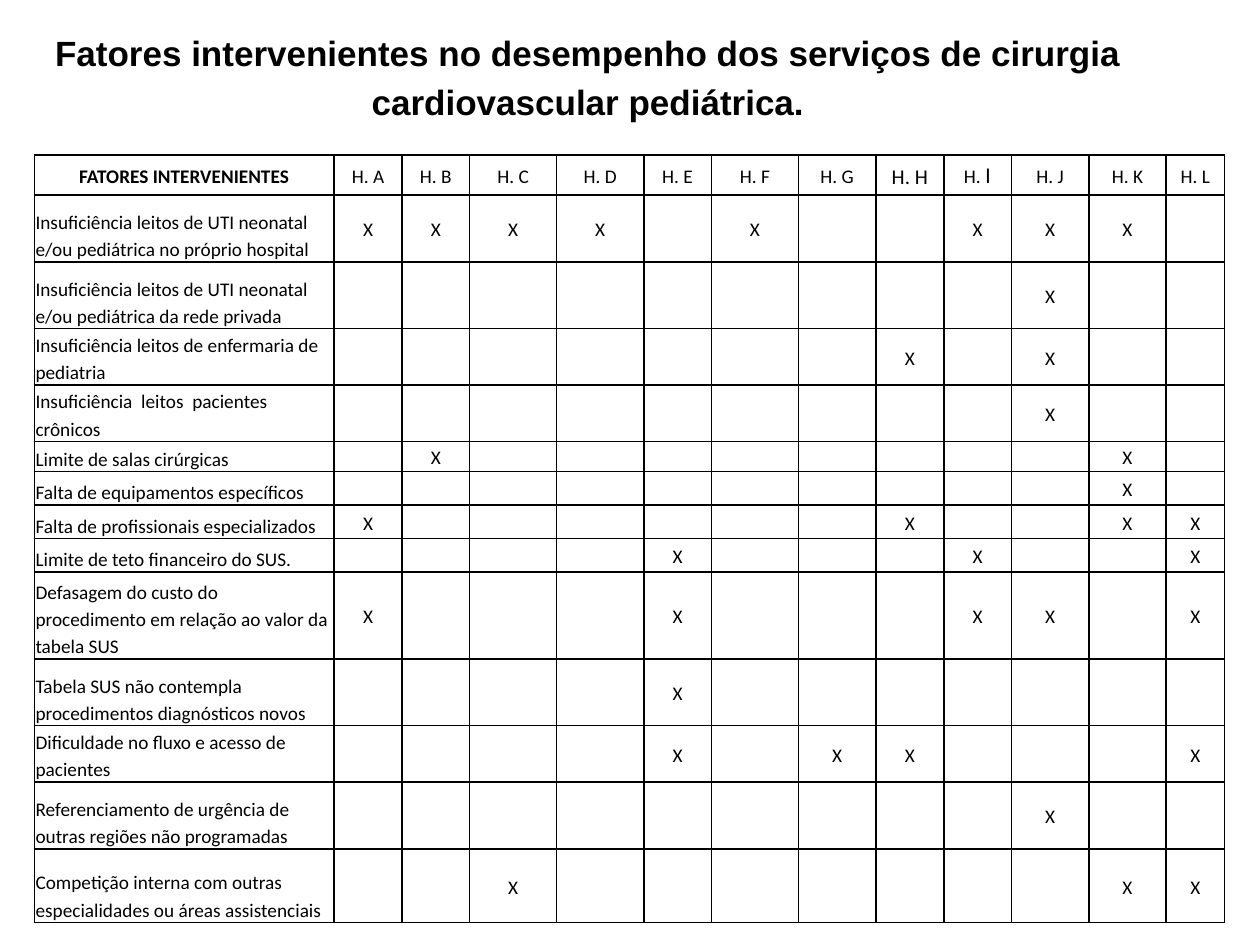
from lxml import etree
from pptx import Presentation
from pptx.dml.color import RGBColor
from pptx.enum import text as t
from pptx.oxml import ns
from pptx.util import Pt

BLACK = RGBColor(0, 0, 0)
WHITE = RGBColor(255, 255, 255)

TITLE = ("Fatores intervenientes no desempenho dos serviços de cirurgia "
         "cardiovascular pediátrica.")
UNITS = "ABCDEFGHIJKL"
WIDTHS = [171.4, 38.8, 38.6, 49.8, 49.8, 38.6, 49.8, 44.3, 38.8, 38.6,
          44.3, 44.3, 33.2]
HEAD = 22.9
# Factor, row height, hospitals marked
ROWS = [
    ("Insuficiência leitos de UTI neonatal e/ou pediátrica no próprio hospital",
     38.2, "ABCDFIJK"),
    ("Insuficiência leitos de UTI neonatal e/ou pediátrica da rede privada",
     38.2, "J"),
    ("Insuficiência leitos de enfermaria de pediatria", 32.2, "HJ"),
    ("Insuficiência  leitos  pacientes crônicos", 32.2, "J"),
    ("Limite de salas cirúrgicas", 17.2, "BK"),
    ("Falta de equipamentos específicos", 19.2, "K"),
    ("Falta de profissionais especializados", 19.2, "AHKL"),
    ("Limite de teto financeiro do SUS.", 19.2, "EIL"),
    ("Defasagem do custo do procedimento em relação ao valor da tabela SUS",
     49.6, "AEIJL"),
    ("Tabela SUS não contempla procedimentos diagnósticos novos", 38.2, "E"),
    ("Dificuldade no fluxo e acesso de pacientes", 32.2, "EGHL"),
    ("Referenciamento de urgência de outras regiões não programadas",
     38.2, "J"),
    ("Competição interna com outras especialidades ou áreas assistenciais",
     42, "CKL"),
]


def write(frame, words, size=11, face="Calibri", bold=False,
          align=t.PP_ALIGN.CENTER):
    """Add a run to the first paragraph; an empty one only gets its size."""
    para = frame.paragraphs[0]
    para.alignment = align
    para.line_spacing = 1.15
    if not words:
        end = etree.SubElement(para._p, ns.qn("a:endParaRPr"))
        end.set("sz", str(size * 100))
        etree.SubElement(end, ns.qn("a:latin")).set("typeface", face)
        return
    run = para.add_run()
    run.text = words
    run.font.size = Pt(size)
    run.font.name = face
    run.font.bold = bold
    run.font.color.rgb = BLACK


def border(cell):
    """Draw a thin black line on all four sides, beneath the fill."""
    props = cell._tc.get_or_add_tcPr()
    for at, side in enumerate(("lnL", "lnR", "lnT", "lnB")):
        line = etree.Element(ns.qn("a:" + side), w=str(Pt(1)))
        fill = etree.SubElement(line, ns.qn("a:solidFill"))
        etree.SubElement(fill, ns.qn("a:srgbClr"), val=str(BLACK))
        props.insert(at, line)


def heading(slide, x, y, w, h):
    box = slide.shapes.add_textbox(Pt(x), Pt(y), Pt(w), Pt(h))
    frame = box.text_frame
    frame.word_wrap = True
    frame.vertical_anchor = t.MSO_ANCHOR.MIDDLE
    frame.margin_top, frame.margin_bottom = 0, Pt(19)
    write(frame, TITLE, size=20, face="Arial", bold=True)


def matrix(slide, x, y):
    heights = [HEAD] + [row[1] for row in ROWS]
    table = slide.shapes.add_table(
        len(heights), len(WIDTHS), Pt(x), Pt(y),
        Pt(sum(WIDTHS)), Pt(sum(heights))).table
    table.first_row = table.horz_banding = False
    for col, width in zip(table.columns, WIDTHS):
        col.width = Pt(width)
    for row, height in zip(table.rows, heights):
        row.height = Pt(height)

    # Look shared by all cells
    for cell in table.iter_cells():
        cell.fill.solid()
        cell.fill.fore_color.rgb = WHITE
        cell.vertical_anchor = t.MSO_ANCHOR.MIDDLE
        cell.margin_left = cell.margin_right = Pt(0.72)
        cell.margin_top = cell.margin_bottom = 0
        border(cell)

    # Header row
    write(table.cell(0, 0).text_frame, "FATORES INTERVENIENTES", bold=True)
    for c, unit in enumerate(UNITS, 1):
        frame = table.cell(0, c).text_frame
        if unit == "I":
            write(frame, "H. ")
            write(frame, unit, size=12, face="Arial")
        else:
            write(frame, "H. " + unit, size=12 if unit == "H" else 11)

    # Factors and their marks
    for r, (factor, _, marks) in enumerate(ROWS, 1):
        first = table.cell(r, 0)
        first.vertical_anchor = t.MSO_ANCHOR.BOTTOM
        write(first.text_frame, factor, align=t.PP_ALIGN.LEFT)
        for c, unit in enumerate(UNITS, 1):
            write(table.cell(r, c).text_frame, "X" if unit in marks else "")


def main():
    deck = Presentation()
    deck.slide_width, deck.slide_height = Pt(720), Pt(540)
    slide = deck.slides.add_slide(deck.slide_layouts[6])
    heading(slide, 0, 15, 672, 73.5)
    matrix(slide, 19.6, 88.6)
    deck.save("out.pptx")


if __name__ == "__main__":
    main()
